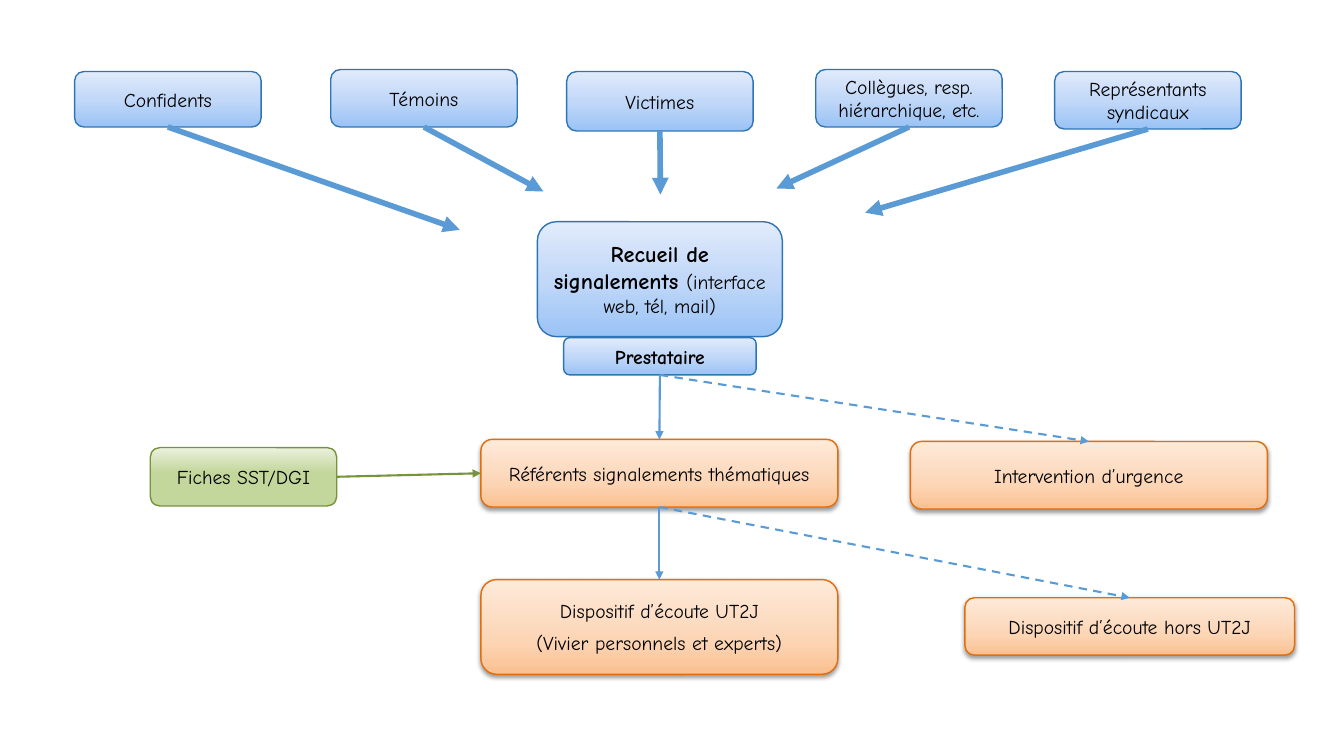
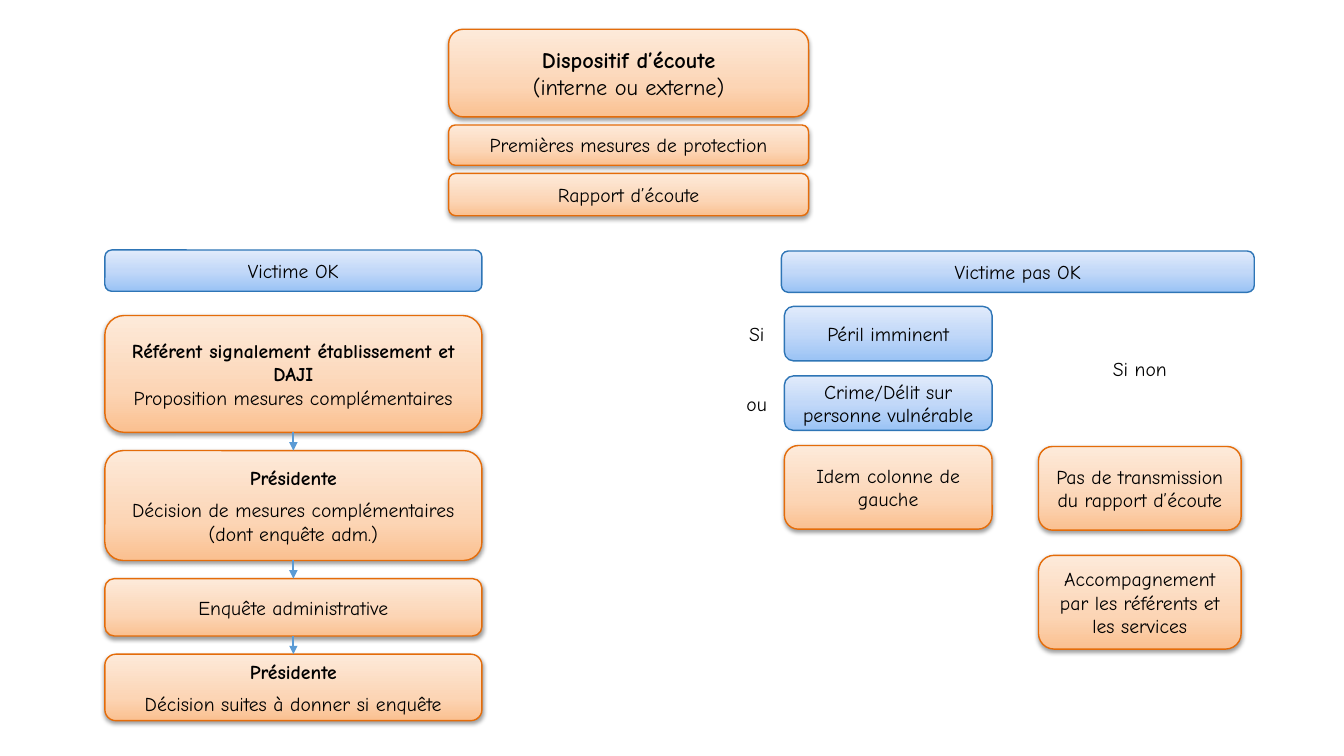
from dataclasses import dataclass, field

from lxml.etree import SubElement
from pptx import Presentation
from pptx.dml.color import RGBColor
from pptx.enum.dml import MSO_LINE
from pptx.enum.shapes import MSO_CONNECTOR, MSO_SHAPE
from pptx.enum.text import MSO_ANCHOR, PP_ALIGN
from pptx.oxml.ns import qn
from pptx.shapes.autoshape import Shape
from pptx.slide import Slide
from pptx.util import Inches, Pt


# Theme: colours, type sizes and the looks of boxes
@dataclass(frozen=True)
class Paint:
    stops: tuple[tuple[int, str], ...]
    edge: str
    inset: float = 0.12
    shade: bool = False


@dataclass(frozen=True)
class Theme:
    font: str = "Comic Neue"
    ink: str = "000000"
    arrow: str = "5B9BD5"
    body: int = 14
    large: int = 16
    after: int = 6
    thin: float = 1.5
    thick: float = 4
    blue: Paint = Paint(((0, "9AC3F5"), (50, "C2D8F8"), (100, "E1EBFB")), "2E75B6")
    green: Paint = Paint(((3, "C3D69B"), (57, "C3D69B"), (100, "EBF1DE")), "77933C")
    orange: Paint = Paint(((0, "FAC090"), (35, "FCD5B5"), (100, "FDEADA")),
                          "E46C0A", 0.05, True)


THEME = Theme()
TOP, LEFT, BOTTOM, RIGHT = range(4)  # connection sites of a box


@dataclass(frozen=True)
class Run:
    text: str
    bold: bool = False
    size: int = THEME.body


@dataclass(frozen=True)
class Para:
    runs: tuple[Run, ...]
    after: int = 0


@dataclass(frozen=True)
class Box:
    high: float
    paras: tuple[Para, ...]
    paint: Paint | None = field(default=THEME.orange)


@dataclass(frozen=True)
class Source:
    left: float
    top: float
    high: float
    text: str
    tip: tuple[float, float]


def line(text: str, bold: bool = False, size: int = THEME.body, after: int = 0) -> Para:
    return Para((Run(text, bold, size),), after)


def plain(high: float, text: str, paint: Paint | None = THEME.orange) -> Box:
    return Box(high, (line(text),), paint)


# Drawing
def tint(shape: Shape, paint: Paint) -> None:
    shape.fill.gradient()
    shape.fill.gradient_angle = 90
    props = shape._element.spPr
    stops = props.find(".//" + qn("a:gsLst"))
    for old in list(stops):
        stops.remove(old)
    for place, tone in paint.stops:
        stop = SubElement(stops, qn("a:gs"), pos=str(place * 1000))
        SubElement(stop, qn("a:srgbClr"), val=tone)
    shape.line.color.rgb = RGBColor.from_string(paint.edge)
    shape.line.width = Pt(1)
    shape.shadow.inherit = False
    if paint.shade:
        cast = SubElement(props.find(qn("a:effectLst")), qn("a:outerShdw"),
                          blurRad="40000", dist="20000", dir="5400000", rotWithShape="0")
        tone = SubElement(cast, qn("a:srgbClr"), val=THEME.ink)
        SubElement(tone, qn("a:alpha"), val="38000")


def write(shape: Shape, paras: tuple[Para, ...], inset: float) -> None:
    frame = shape.text_frame
    frame.word_wrap = True
    frame.vertical_anchor = MSO_ANCHOR.MIDDLE
    frame.margin_left = frame.margin_right = Inches(0.1)
    frame.margin_top = frame.margin_bottom = Inches(inset)
    for i, para in enumerate(paras):
        part = frame.paragraphs[0] if i == 0 else frame.add_paragraph()
        part.alignment = PP_ALIGN.CENTER
        part.space_after = Pt(para.after)
        for item in para.runs:
            run = part.add_run()
            run.text = item.text
            run.font.name = THEME.font
            run.font.size = Pt(item.size)
            run.font.bold = item.bold
            run.font.color.rgb = RGBColor.from_string(THEME.ink)


def place(slide: Slide, left: float, top: float, wide: float, box: Box) -> Shape:
    spot = Inches(left), Inches(top), Inches(wide), Inches(box.high)
    if box.paint:
        shape = slide.shapes.add_shape(MSO_SHAPE.ROUNDED_RECTANGLE, *spot)
        tint(shape, box.paint)
    else:
        shape = slide.shapes.add_textbox(*spot)
    write(shape, box.paras, box.paint.inset if box.paint else 0.12)
    return shape


def stack(slide: Slide, left: float, top: float, wide: float, gap: float,
          boxes: list[Box]) -> list[Shape]:
    shapes = []
    for box in boxes:
        shapes.append(place(slide, left, top, wide, box))
        top += box.high + gap
    return shapes


def link(slide: Slide, start: Shape, goal: Shape | tuple[float, float],
         out: int = BOTTOM, into: int = TOP, tone: str = THEME.arrow,
         width: float = THEME.thin, dash: bool = False) -> None:
    x, y = goal if isinstance(goal, tuple) else (0, 0)
    arrow = slide.shapes.add_connector(
        MSO_CONNECTOR.STRAIGHT, Inches(x), Inches(y), Inches(x), Inches(y))
    arrow.begin_connect(start, out)
    if not isinstance(goal, tuple):
        arrow.end_connect(goal, into)
    arrow.line.color.rgb = RGBColor.from_string(tone)
    arrow.line.width = Pt(width)
    if dash:
        arrow.line.dash_style = MSO_LINE.DASH
    props = arrow._element.spPr
    SubElement(props.find(qn("a:ln")), qn("a:tailEnd"), type="triangle")
    SubElement(props, qn("a:effectLst"))


# Slide 1: how reports come in and where they go
SOURCES = [
    Source(0.74, 0.71, 0.55, "Confidents", (4.56, 2.28)),
    Source(3.28, 0.69, 0.57, "Témoins", (5.39, 1.9)),
    Source(5.62, 0.71, 0.59, "Victimes", (6.55, 1.93)),
    Source(8.09, 0.69, 0.57, "Collègues, resp. hiérarchique, etc.", (7.7, 1.87)),
    Source(10.46, 0.71, 0.57, "Représentants syndicaux", (8.58, 2.11)),
]


def intake(slide: Slide) -> None:
    small, wide = 1.85, 3.54
    for item in SOURCES:
        shape = place(slide, item.left, item.top, small,
                      plain(item.high, item.text, THEME.blue))
        link(slide, shape, item.tip, width=THEME.thick)

    # Central desk
    place(slide, 5.33, 2.2, 2.43, Box(1.14, (Para((
        Run("Recueil de signalements ", True, THEME.large),
        Run("(interface web, tél, mail)"))),), THEME.blue))
    desk = place(slide, 5.59, 3.35, 1.91,
                 Box(0.37, (line("Prestataire", True),), THEME.blue))

    # Follow-up
    forms = place(slide, 1.49, 4.44, small, plain(0.58, "Fiches SST/DGI", THEME.green))
    leads, listen = stack(slide, 4.77, 4.36, wide, 0.72, [
        plain(0.67, "Référents signalements thématiques"),
        Box(0.94, (line("Dispositif d’écoute UT2J", after=THEME.after),
                   line("(Vivier personnels et experts)"))),
    ])
    urgent = place(slide, 9.03, 4.38, wide, plain(0.67, "Intervention d’urgence"))
    other = place(slide, 9.57, 5.93, 3.27, plain(0.57, "Dispositif d’écoute hors UT2J"))

    link(slide, forms, leads, RIGHT, LEFT, THEME.green.edge)
    link(slide, desk, leads)
    link(slide, leads, listen)
    link(slide, desk, urgent, dash=True)
    link(slide, leads, other, dash=True)


# Slide 2: what follows the listening stage
def outcome(slide: Slide) -> None:
    stack(slide, 4.45, 0.29, 3.57, 0.08, [
        Box(0.87, (line("Dispositif d’écoute", True, THEME.large),
                   line("(interne ou externe)", size=THEME.large))),
        plain(0.4, "Premières mesures de protection"),
        plain(0.42, "Rapport d’écoute"),
    ])

    # Victim agrees
    place(slide, 1.04, 2.48, 3.74, plain(0.41, "Victime OK", THEME.blue))
    steps = stack(slide, 1.04, 3.13, 3.74, 0.18, [
        Box(1.16, (line("Référent signalement établissement et DAJI", True),
                   line("Proposition mesures complémentaires"))),
        Box(1.09, (line("Présidente", True, after=THEME.after),
                   line("Décision de mesures complémentaires (dont enquête adm.)",
                        after=THEME.after))),
        plain(0.57, "Enquête administrative"),
        Box(0.66, (line("Présidente", True, after=THEME.after),
                   line("Décision suites à donner si enquête"))),
    ])
    for start, goal in zip(steps, steps[1:]):
        link(slide, start, goal)

    # Victim does not agree
    place(slide, 7.75, 2.49, 4.69, plain(0.41, "Victime pas OK", THEME.blue))
    stack(slide, 7.78, 3.04, 2.06, 0.15, [
        plain(0.54, "Péril imminent", THEME.blue),
        plain(0.54, "Crime/Délit sur personne vulnérable", THEME.blue),
        plain(0.83, "Idem colonne de gauche"),
    ])
    stack(slide, 10.3, 4.43, 2.01, 0.25, [
        plain(0.83, "Pas de transmission du rapport d’écoute"),
        plain(0.93, "Accompagnement par les référents et les services"),
    ])

    # Conditions
    stack(slide, 7.23, 3.08, 0.55, 0.22, [
        plain(0.47, "Si", None),
        plain(0.47, "ou", None),
    ])
    place(slide, 10.3, 3.49, 2.01, plain(0.33, "Si non", None))


def main() -> None:
    deck = Presentation()
    deck.slide_width, deck.slide_height = Inches(13.33), Inches(7.5)
    blank = deck.slide_layouts[6]
    for draw in (intake, outcome):
        draw(deck.slides.add_slide(blank))
    deck.save("out.pptx")


if __name__ == "__main__":
    main()
